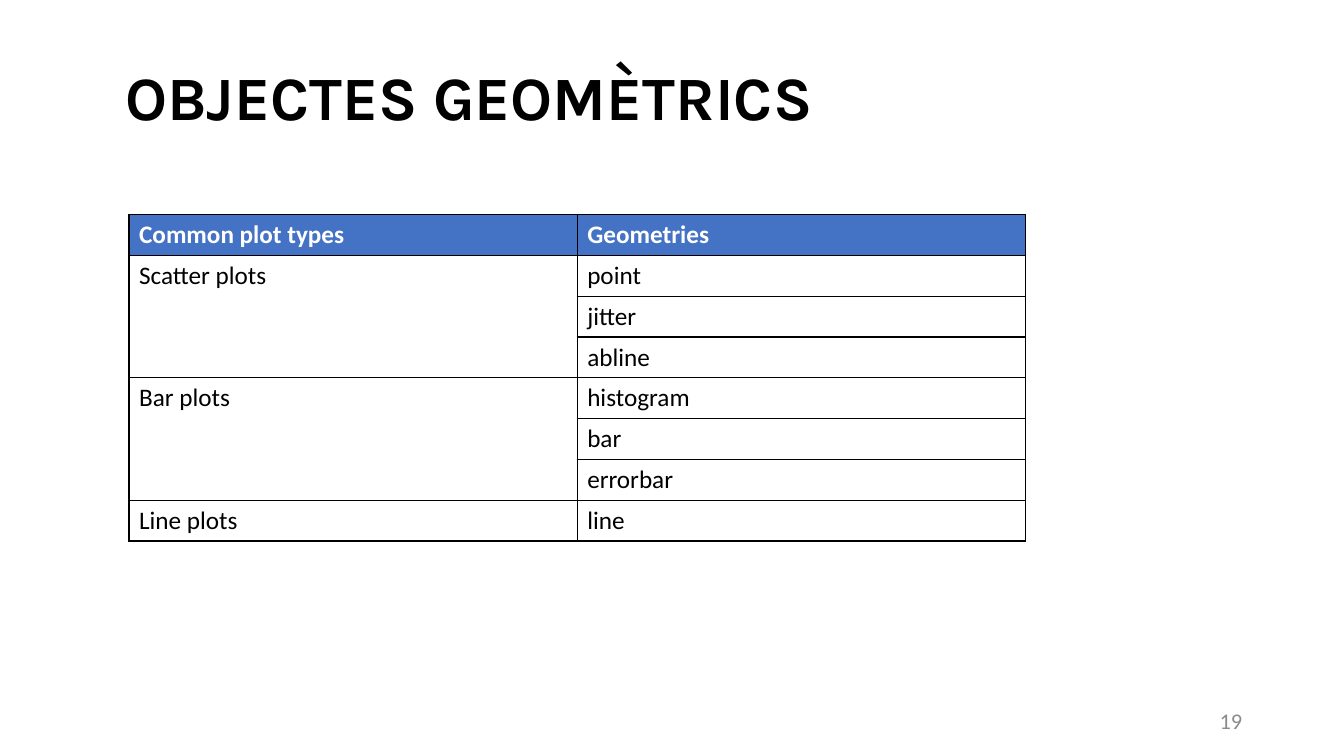
import pptx
import pptx.util
import pptx.dml.color
import pptx.enum.text
import pptx.oxml
import pptx.oxml.ns
from pptx.util import Inches

RGBColor = pptx.dml.color.RGBColor
BLACK = RGBColor(0x00, 0x00, 0x00)
WHITE = RGBColor(0xFF, 0xFF, 0xFF)
HEADER_BLUE = RGBColor(0x44, 0x72, 0xC4)
NUMBER_GREY = RGBColor(0x8C, 0x8C, 0x8C)

ALIGN = pptx.enum.text.PP_ALIGN
ANCHOR = pptx.enum.text.MSO_ANCHOR

HEADERS = ("Common plot types", "Geometries")
GEOMETRIES = {
    "Scatter plots": ("point", "jitter", "abline"),
    "Bar plots": ("histogram", "bar", "errorbar"),
    "Line plots": ("line",),
}


class SlideBuilder:
    """Holds the fonts and the current slide."""

    heading_font = "Karla"
    body_font = "Calibri"

    def __init__(self, slide):
        self.slide = slide

    def add_run(self, paragraph, text, font, size, color, bold=False):
        run = paragraph.add_run()
        run.text = text
        run.font.name = font
        run.font.size = pptx.util.Pt(size)
        run.font.color.rgb = color
        run.font.bold = bold

    def title(self, text, left, top, width, height):
        heading = self.slide.shapes.title
        heading.left, heading.top = Inches(left), Inches(top)
        heading.width, heading.height = Inches(width), Inches(height)
        frame = heading.text_frame
        frame.word_wrap = True
        frame.auto_size = pptx.enum.text.MSO_AUTO_SIZE.NONE
        frame.vertical_anchor = ANCHOR.TOP
        paragraph = frame.paragraphs[0]
        paragraph.alignment = ALIGN.LEFT
        paragraph.line_spacing = 0.9
        paragraph.space_before = pptx.util.Pt(10)
        self.add_run(paragraph, text, self.heading_font, 44, BLACK, bold=True)

    def page_number(self, text, left, top, width, height):
        box = self.slide.shapes.add_textbox(
            Inches(left), Inches(top), Inches(width), Inches(height))
        frame = box.text_frame
        frame.word_wrap = True
        frame.vertical_anchor = ANCHOR.MIDDLE
        paragraph = frame.paragraphs[0]
        paragraph.alignment = ALIGN.RIGHT
        self.add_run(paragraph, text, self.body_font, 16, NUMBER_GREY)

    def write_cell(self, cell, text, color=BLACK, bold=False):
        self.add_run(cell.text_frame.paragraphs[0], text,
                     self.body_font, 18, color, bold)

    def border(self, cell):
        properties = cell._tc.get_or_add_tcPr()
        for position, side in enumerate(("lnL", "lnR", "lnT", "lnB")):
            line = pptx.oxml.parse_xml(
                f'<a:{side} {pptx.oxml.ns.nsdecls("a")} w="{pptx.util.Pt(1)}">'
                f'<a:solidFill><a:srgbClr val="{BLACK}"/></a:solidFill></a:{side}>')
            properties.insert(position, line)

    def grouped_table(self, headers, groups, left, top, width, height):
        row_count = 1 + sum(len(members) for members in groups.values())
        table = self.slide.shapes.add_table(
            row_count, len(headers), Inches(left), Inches(top),
            Inches(width), Inches(height)).table
        table.horz_banding = False

        # Fills and grid lines
        for row_index, row in enumerate(table.rows):
            for cell in row.cells:
                if row_index == 0:
                    cell.fill.solid()
                    cell.fill.fore_color.rgb = HEADER_BLUE
                else:
                    cell.fill.background()
                self.border(cell)

        # Header row
        for column, header in enumerate(headers):
            self.write_cell(table.cell(0, column), header, WHITE, bold=True)

        # One merged label per group, one row per member
        first = 1
        for label, members in groups.items():
            last = first + len(members) - 1
            if last > first:
                table.cell(first, 0).merge(table.cell(last, 0))
            self.write_cell(table.cell(first, 0), label)
            for row_index, member in enumerate(members, first):
                self.write_cell(table.cell(row_index, 1), member)
            first = last + 1


def main():
    presentation = pptx.Presentation()
    presentation.slide_width = Inches(13.33)
    presentation.slide_height = Inches(7.5)
    title_only = presentation.slide_layouts[5]
    builder = SlideBuilder(presentation.slides.add_slide(title_only))

    builder.title("OBJECTES GEOMÈTRICS", 1.14, 0.62, 11.03, 0.71)
    builder.page_number("19", 9.42, 6.95, 3, 0.4)
    builder.grouped_table(HEADERS, GEOMETRIES, 1.28, 2.13, 8.89, 3.24)

    presentation.save("out.pptx")


if __name__ == "__main__":
    main()
